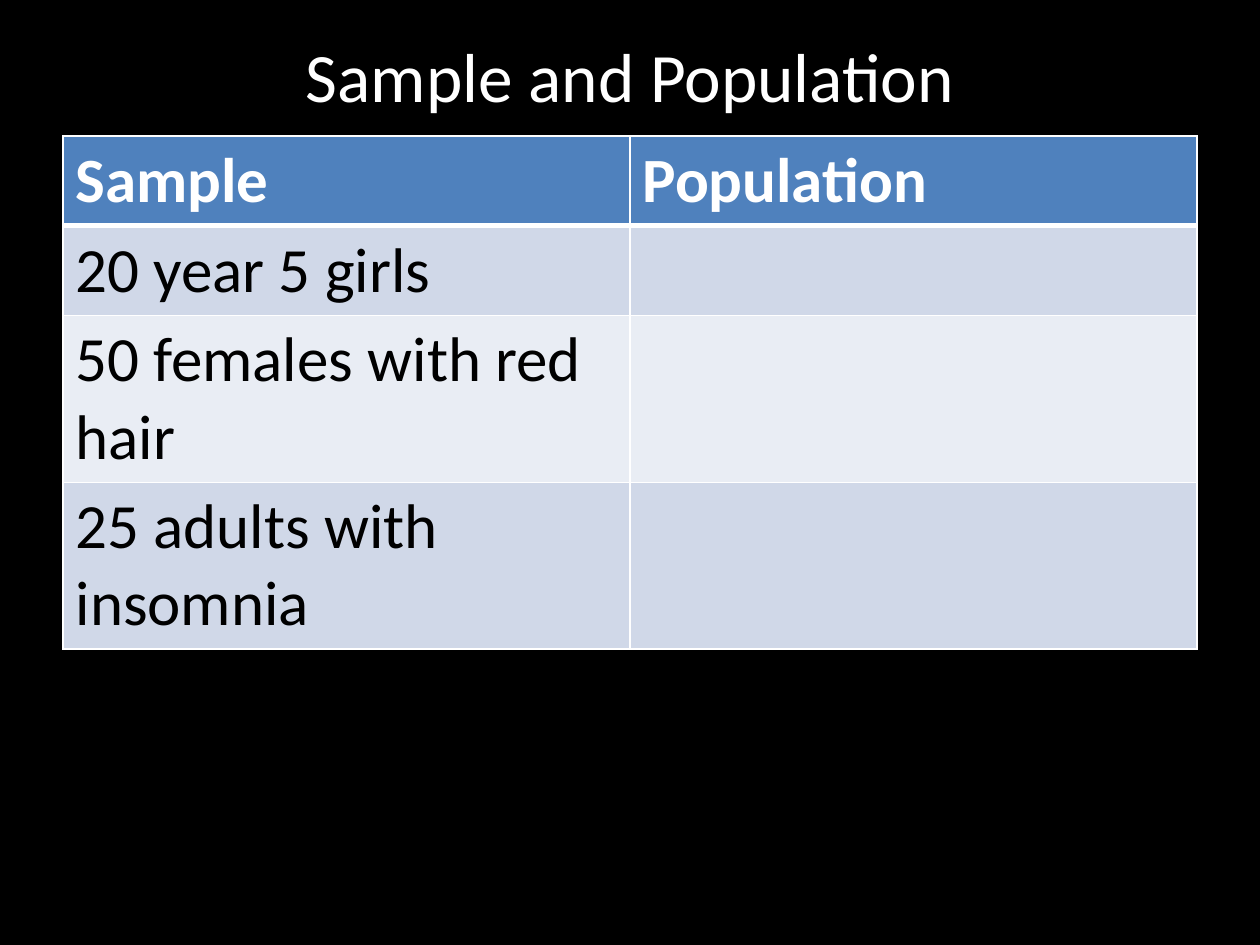
from dataclasses import dataclass

from lxml import etree
from pptx import Presentation
from pptx import util as u
from pptx.dml.color import RGBColor
from pptx.enum import text
from pptx.oxml import ns

WHITE, BLACK = "FFFFFF", "000000"
THIN, THICK = 1, 3


@dataclass
class Row:
    sample: str
    height: float
    fill: str
    population: str = ""
    color: str = BLACK
    bold: bool = False
    top: int = THIN
    bottom: int = THIN


ROWS = [
    Row("Sample", 0.7, "4F81BD", "Population", WHITE, True, bottom=THICK),
    Row("20 year 5 girls", 0.7, "D0D8E8", top=THICK),
    Row("50 females with red hair", 1.3, "E9EDF4"),
    Row("25 adults with insomnia", 1.3, "D0D8E8"),
]


def paint(fill, color: str) -> None:
    fill.solid()
    fill.fore_color.rgb = RGBColor.from_string(color)


def format_font(font, color: str, **values) -> None:
    for name, value in values.items():
        setattr(font, name, value)
    paint(font.fill, color)


def add_borders(cell, widths: dict[str, int]) -> None:
    """Draw white cell borders; call before filling the cell."""
    properties = cell._tc.get_or_add_tcPr()
    for side, width in widths.items():
        line = etree.SubElement(properties, ns.qn(f"a:ln{side}"), w=str(u.Pt(width)))
        solid = etree.SubElement(line, ns.qn("a:solidFill"))
        etree.SubElement(solid, ns.qn("a:srgbClr"), val=WHITE)


def add_title(page, wording: str) -> None:
    title = page.shapes.title
    place = {"left": 0.5, "top": 0.3, "width": 9, "height": 0.58}
    for name, value in place.items():
        setattr(title, name, u.Inches(value))
    frame = title.text_frame
    frame.text = wording
    frame.auto_size = text.MSO_AUTO_SIZE.NONE
    frame.vertical_anchor = text.MSO_ANCHOR.MIDDLE
    para = frame.paragraphs[0]
    para.alignment = text.PP_ALIGN.CENTER
    format_font(para.runs[0].font, WHITE, name="Calibri", size=u.Pt(39.6))


def fill_row(table, index: int, row: Row) -> None:
    table.rows[index].height = u.Inches(row.height)
    for cell, wording in zip(table.rows[index].cells, (row.sample, row.population)):
        add_borders(cell, {"L": THIN, "R": THIN, "T": row.top, "B": row.bottom})
        paint(cell.fill, row.fill)
        if wording:
            span = cell.text_frame.paragraphs[0].add_run()
            span.text = wording
            format_font(span.font, row.color, name="Calibri", size=u.Pt(36), bold=row.bold)


def main() -> None:
    deck = Presentation()
    deck.slide_width, deck.slide_height = u.Inches(10), u.Inches(7.5)
    page = deck.slides.add_slide(deck.slide_layouts[5])
    paint(page.background.fill, BLACK)
    add_title(page, "Sample and Population")
    height = sum(row.height for row in ROWS)
    table = page.shapes.add_table(
        len(ROWS), 2, u.Inches(0.5), u.Inches(1.08), u.Inches(9), u.Inches(height)
    ).table
    for index, row in enumerate(ROWS):
        fill_row(table, index, row)
    deck.save("out.pptx")


if __name__ == "__main__":
    main()
